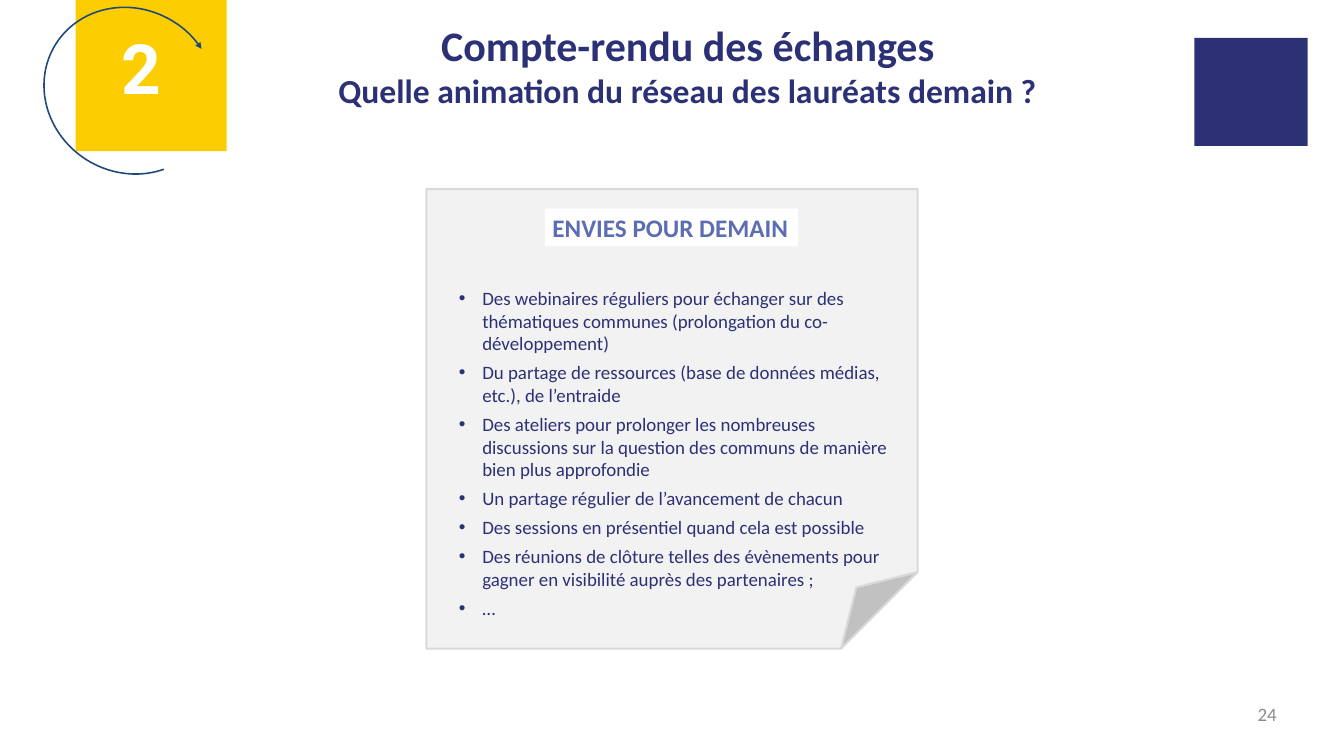
from dataclasses import dataclass

from lxml.etree import SubElement
from pptx import Presentation
from pptx.dml.color import RGBColor
from pptx.enum.shapes import MSO_SHAPE
from pptx.enum.text import MSO_ANCHOR, MSO_AUTO_SIZE, PP_ALIGN
from pptx.oxml.ns import qn
from pptx.shapes.base import BaseShape
from pptx.slide import Slide
from pptx.text.text import TextFrame, _Paragraph as Paragraph
from pptx.util import Inches, Pt


@dataclass(frozen=True)
class Theme:
    font: str = "Calibri"
    number_font: str = "Roboto"
    navy: str = "2C3176"
    yellow: str = "FCCD00"
    arc_blue: str = "1F497D"
    label_blue: str = "5D6DB3"
    paper: str = "F2F2F2"
    paper_edge: str = "D9D9D9"
    white: str = "FFFFFF"
    gray: str = "8C8C8C"
    title_size: int = 40
    subtitle_size: int = 32
    label_size: int = 24
    body_size: int = 18
    number_size: int = 66


@dataclass(frozen=True)
class Box:
    left: float
    top: float
    width: float
    height: float

    def lengths(self) -> tuple[Inches, Inches, Inches, Inches]:
        return Inches(self.left), Inches(self.top), Inches(self.width), Inches(self.height)


@dataclass(frozen=True)
class TextStyle:
    size: int
    color: str
    bold: bool = False
    font: str = "Calibri"
    align: PP_ALIGN = PP_ALIGN.LEFT


Point = tuple[float, float]

THEME = Theme()
WISHES = [
    "Des webinaires réguliers pour échanger sur des thématiques communes (prolongation du co-développement)",
    "Du partage de ressources (base de données médias, etc.), de l’entraide",
    "Des ateliers pour prolonger les nombreuses discussions sur la question des communs de manière bien plus approfondie",
    "Un partage régulier de l’avancement de chacun",
    "Des sessions en présentiel quand cela est possible",
    "Des réunions de clôture telles des évènements pour gagner en visibilité auprès des partenaires ;",
    "…",
]
BADGE_START: Point = (0.77, 1.36)
BADGE_CURVES: list[tuple[Point, Point, Point]] = [
    ((0.70, 0.86), (1.21, 0.21), (1.87, 0.23)),
    ((2.49, 0.23), (2.95, 0.76), (2.96, 1.36)),
    ((2.83, 2.02), (2.39, 2.58), (1.87, 2.48)),
    ((1.28, 2.47), (0.71, 1.99), (0.77, 1.36)),
]


def place(shape: BaseShape, box: Box) -> None:
    shape.left, shape.top, shape.width, shape.height = box.lengths()


def paint(shape: BaseShape, fill: str | None, line: str | None = None, width: float = 1) -> None:
    shape.shadow.inherit = False
    if fill:
        shape.fill.solid()
        shape.fill.fore_color.rgb = RGBColor.from_string(fill)
    else:
        shape.fill.background()
    if line:
        shape.line.color.rgb = RGBColor.from_string(line)
        shape.line.width = Pt(width)
    else:
        shape.line.fill.background()


def format_paragraph(paragraph: Paragraph, style: TextStyle) -> None:
    paragraph.alignment = style.align
    font = paragraph.font
    font.name, font.size, font.bold = style.font, Pt(style.size), style.bold
    font.color.rgb = RGBColor.from_string(style.color)


def prepare_frame(frame: TextFrame) -> None:
    frame.word_wrap = True
    frame.auto_size = MSO_AUTO_SIZE.NONE
    frame.vertical_anchor = MSO_ANCHOR.TOP


def add_text(slide: Slide, box: Box, text: str, style: TextStyle) -> BaseShape:
    shape = slide.shapes.add_textbox(*box.lengths())
    prepare_frame(shape.text_frame)
    shape.text_frame.text = text
    format_paragraph(shape.text_frame.paragraphs[0], style)
    return shape


def curve_points(start: Point, curves: list[tuple[Point, Point, Point]], steps: int = 24) -> list[Point]:
    """Sample chained cubic Bézier curves."""
    points = []
    for first, second, end in curves:
        for step in range(1, steps + 1):
            t = step / steps
            weights = ((1 - t) ** 3, 3 * t * (1 - t) ** 2, 3 * t**2 * (1 - t), t**3)
            controls = (start, first, second, end)
            points.append(tuple(sum(w * c[axis] for w, c in zip(weights, controls)) for axis in (0, 1)))
        start = end
    return points


def add_badge(slide: Slide) -> None:
    builder = slide.shapes.build_freeform(*BADGE_START, scale=Inches(1))
    builder.add_line_segments(curve_points(BADGE_START, BADGE_CURVES))
    paint(builder.convert_to_shape(), THEME.yellow)

    arc = slide.shapes.add_shape(MSO_SHAPE.ARC, *Box(0.64, 0.04, 2.16, 2.32).lengths())
    arc.rotation = 121.8
    arc.adjustments[0], arc.adjustments[1] = 182.93, 124.73
    paint(arc, None, THEME.arc_blue, 1.5)
    SubElement(arc.line._get_or_add_ln(), qn("a:tailEnd"), type="triangle")

    style = TextStyle(THEME.number_size, THEME.white, True, THEME.number_font, PP_ALIGN.CENTER)
    add_text(slide, Box(1.47, 0.29, 0.79, 0.61), "2", style)


def fill_title(slide: Slide) -> None:
    title = slide.shapes.title
    place(title, Box(3.81, 0.21, 10.58, 1.31))
    prepare_frame(title.text_frame)
    title.text_frame.text = "Compte-rendu des échanges\nQuelle animation du réseau des lauréats demain ?"
    for paragraph, size in zip(title.text_frame.paragraphs, (THEME.title_size, THEME.subtitle_size)):
        format_paragraph(paragraph, TextStyle(size, THEME.navy, True, align=PP_ALIGN.CENTER))


def add_note(slide: Slide) -> None:
    paper = slide.shapes.add_shape(MSO_SHAPE.FOLDED_CORNER, *Box(5.64, 2.5, 6.5, 6.08).lengths())
    paint(paper, THEME.paper, THEME.paper_edge, 2)
    label = add_text(slide, Box(7.21, 2.76, 3.35, 0.5), "ENVIES POUR DEMAIN",
                     TextStyle(THEME.label_size, THEME.label_blue, True))
    label.text_frame.word_wrap = False
    label.fill.solid()
    label.fill.fore_color.rgb = RGBColor.from_string(THEME.white)


def fill_wishes(slide: Slide) -> None:
    body = slide.placeholders[1]
    place(body, Box(5.97, 3.74, 5.92, 4.54))
    prepare_frame(body.text_frame)
    body.text_frame.text = "\n".join(WISHES)
    for paragraph in body.text_frame.paragraphs:
        format_paragraph(paragraph, TextStyle(THEME.body_size, THEME.navy))
        paragraph.space_before, paragraph.space_after = Pt(0), Pt(6)
        properties = paragraph._p.get_or_add_pPr()
        properties.set("marL", str(Inches(0.31)))
        properties.set("indent", str(-Inches(0.31)))
    # The list lies on top of the paper.
    slide.shapes._spTree.append(body._element)


def main() -> None:
    presentation = Presentation()
    presentation.slide_width, presentation.slide_height = Inches(17.78), Inches(10)
    slide = presentation.slides.add_slide(presentation.slide_layouts[1])

    fill_title(slide)
    emblem = slide.shapes.add_shape(MSO_SHAPE.RECTANGLE, *Box(15.8, 0.5, 1.5, 1.43).lengths())
    paint(emblem, THEME.navy)
    add_badge(slide)
    add_note(slide)
    fill_wishes(slide)

    page = add_text(slide, Box(12.8, 9.3, 4.09, 0.5), "24",
                    TextStyle(THEME.body_size, THEME.gray, align=PP_ALIGN.RIGHT))
    frame = page.text_frame
    frame.margin_left = frame.margin_top = frame.margin_right = frame.margin_bottom = 0

    presentation.save("out.pptx")


if __name__ == "__main__":
    main()
